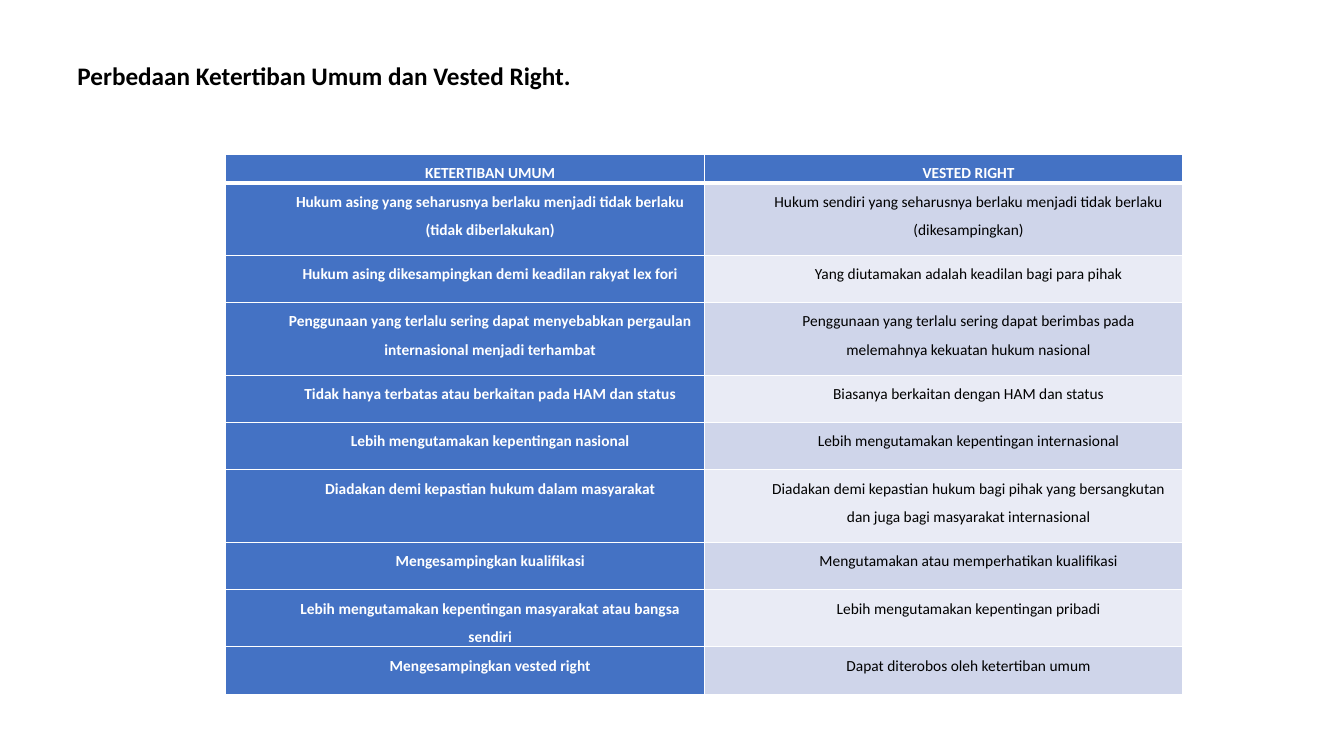
"""Build a slide comparing public order with vested rights in a two-column table."""
import pptx
import pptx.dml.color
import pptx.enum.text
import pptx.oxml
import pptx.oxml.ns
import pptx.util

Inches = pptx.util.Inches
THEME = {
    "font": "Calibri", "title_size": 18, "table_size": 11,
    "white": "FFFFFF", "black": "000000", "blue": "4472C4",
    "bands": ["CFD5EA", "E9EBF5"], "line": 1, "header_line": 3,
}
ROWS = [
    (0.22, "KETERTIBAN UMUM", "VESTED RIGHT"),
    (0.72, "Hukum asing yang seharusnya berlaku menjadi tidak berlaku (tidak diberlakukan)",
     "Hukum sendiri yang seharusnya berlaku menjadi tidak berlaku (dikesampingkan)"),
    (0.47, "Hukum asing dikesampingkan demi keadilan rakyat lex fori",
     "Yang diutamakan adalah keadilan bagi para pihak"),
    (0.72, "Penggunaan yang terlalu sering dapat menyebabkan pergaulan internasional menjadi terhambat",
     "Penggunaan yang terlalu sering dapat berimbas pada melemahnya kekuatan hukum nasional"),
    (0.47, "Tidak hanya terbatas atau berkaitan pada HAM dan status",
     "Biasanya berkaitan dengan HAM dan status"),
    (0.47, "Lebih mengutamakan kepentingan nasional",
     "Lebih mengutamakan kepentingan internasional"),
    (0.72, "Diadakan demi kepastian hukum dalam masyarakat",
     "Diadakan demi kepastian hukum bagi pihak yang bersangkutan dan juga bagi masyarakat internasional"),
    (0.47, "Mengesampingkan kualifikasi", "Mengutamakan atau memperhatikan kualifikasi"),
    (0.47, "Lebih mengutamakan kepentingan masyarakat atau bangsa sendiri",
     "Lebih mengutamakan kepentingan pribadi"),
    (0.47, "Mengesampingkan vested right", "Dapat diterobos oleh ketertiban umum"),
]


def write_text(paragraph, text, size, color, bold):
    run = paragraph.add_run()
    run.text = text
    font_format = {"name": THEME["font"], "size": pptx.util.Pt(size), "bold": bold}
    for name, value in font_format.items():
        setattr(run.font, name, value)
    run.font.color.rgb = pptx.dml.color.RGBColor.from_string(color)


def add_borders(cell, top, bottom):
    properties = cell._tc.get_or_add_tcPr()
    widths = {"lnL": THEME["line"], "lnR": THEME["line"], "lnT": top, "lnB": bottom}
    for position, (side, width) in enumerate(widths.items()):
        border = pptx.oxml.parse_xml(
            f'<a:{side} {pptx.oxml.ns.nsdecls("a")} w="{pptx.util.Pt(width)}"><a:solidFill>'
            f'<a:srgbClr val="{THEME["white"]}"/></a:solidFill></a:{side}>')
        properties.insert(position, border)


presentation = pptx.Presentation()
presentation.slide_width = Inches(13.33)
presentation.slide_height = Inches(7.5)
slide = presentation.slides.add_slide(presentation.slide_layouts[6])

table_height = sum(row[0] for row in ROWS)
table = slide.shapes.add_table(
    len(ROWS), 2, Inches(2.24), Inches(1.53), Inches(9.49), Inches(table_height)).table
table.first_col = True
cell_format = {
    "margin_left": Inches(0.07), "margin_right": Inches(0.07),
    "margin_top": 0, "margin_bottom": 0,
}
paragraph_format = {"alignment": pptx.enum.text.PP_ALIGN.CENTER, "line_spacing": 1.5}

for row_index, (height, *texts) in enumerate(ROWS):
    table.rows[row_index].height = Inches(height)
    top = THEME["header_line"] if row_index == 1 else THEME["line"]
    bottom = THEME["header_line"] if row_index == 0 else THEME["line"]
    for column_index, text in enumerate(texts):
        cell = table.cell(row_index, column_index)
        for name, value in cell_format.items():
            setattr(cell, name, value)
        heading = row_index == 0 or column_index == 0
        fill = THEME["blue"] if heading else THEME["bands"][(row_index - 1) % 2]
        cell.fill.solid()
        cell.fill.fore_color.rgb = pptx.dml.color.RGBColor.from_string(fill)
        add_borders(cell, top, bottom)
        paragraph = cell.text_frame.paragraphs[0]
        for name, value in paragraph_format.items():
            setattr(paragraph, name, value)
        paragraph.space_after = pptx.util.Pt(8 * column_index)
        paragraph._p.get_or_add_pPr().set("marL", str(Inches(0.5)))
        color = THEME["white"] if heading else THEME["black"]
        write_text(paragraph, text, THEME["table_size"], color, heading)

title = slide.shapes.add_textbox(Inches(0.67), Inches(0.55), Inches(12.07), Inches(0.4))
title_format = {
    "word_wrap": True,
    "vertical_anchor": pptx.enum.text.MSO_ANCHOR.MIDDLE,
    "auto_size": pptx.enum.text.MSO_AUTO_SIZE.SHAPE_TO_FIT_TEXT,
}
for name, value in title_format.items():
    setattr(title.text_frame, name, value)
write_text(title.text_frame.paragraphs[0], "Perbedaan Ketertiban Umum dan Vested Right.",
           THEME["title_size"], THEME["black"], True)

presentation.save("out.pptx")
